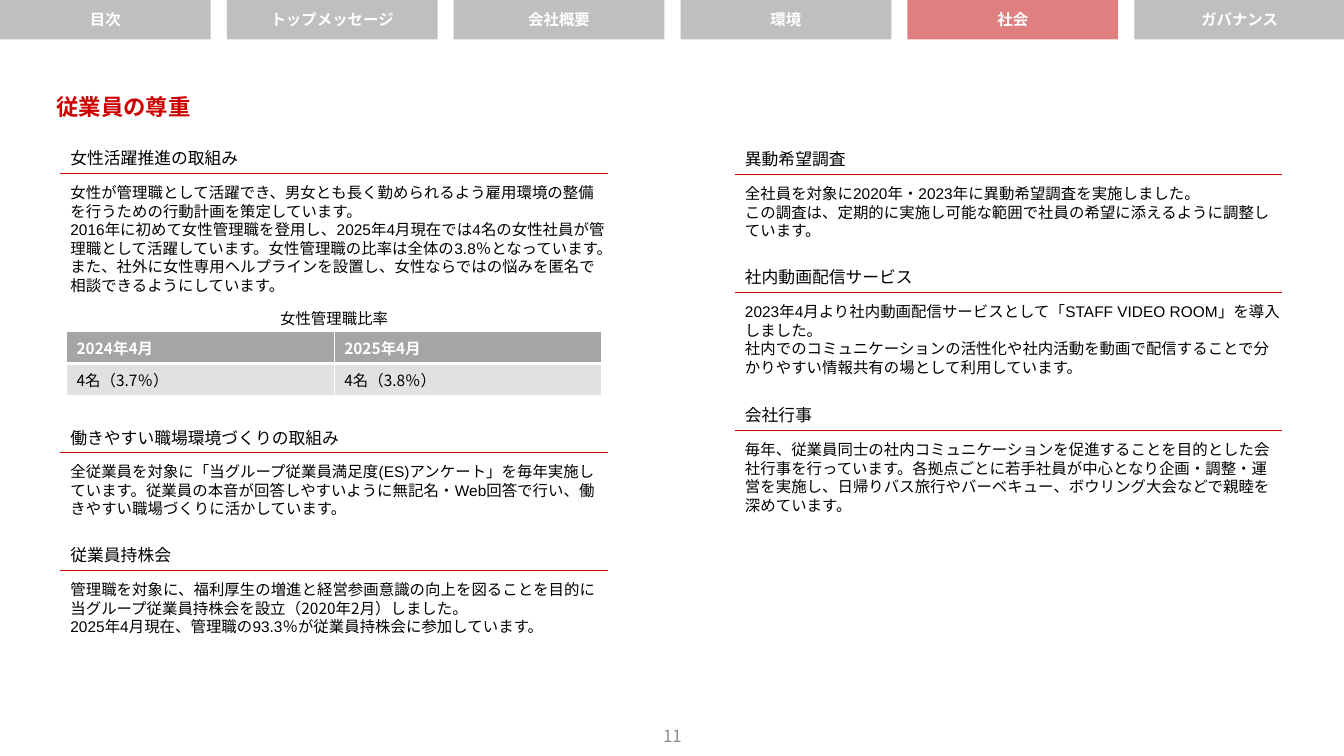
from dataclasses import dataclass

from lxml import etree
from pptx import Presentation
from pptx.dml.color import RGBColor
from pptx.enum.lang import MSO_LANGUAGE_ID
from pptx.enum.shapes import MSO_CONNECTOR, MSO_SHAPE
from pptx.enum.text import MSO_ANCHOR, MSO_AUTO_SIZE, PP_ALIGN
from pptx.oxml.ns import qn
from pptx.util import Inches, Pt

LEFT, CENTER = PP_ALIGN.LEFT, PP_ALIGN.CENTER
TOP, MIDDLE = MSO_ANCHOR.TOP, MSO_ANCHOR.MIDDLE
FIT = MSO_AUTO_SIZE.SHAPE_TO_FIT_TEXT
FIXED = MSO_AUTO_SIZE.NONE
RECTANGLE, STRAIGHT = MSO_SHAPE.RECTANGLE, MSO_CONNECTOR.STRAIGHT
JAPANESE = MSO_LANGUAGE_ID.JAPANESE


@dataclass(frozen=True)
class Theme:
    latin: str = "Arial"
    japanese: str = "Noto Sans CJK JP"
    red: str = "CC0000"
    active_tab: str = "C00000"
    tab: str = "BFBFBF"
    black: str = "000000"
    white: str = "FFFFFF"
    page: str = "8C8C8C"
    table_head: str = "A5A5A5"
    table_body: str = "E1E1E1"
    title_size: int = 16
    heading_size: int = 12
    body_size: int = 11


THEME = Theme()

TABS = ["目次", "トップメッセージ", "会社概要", "環境", "社会", "ガバナンス"]
ACTIVE_TAB = "社会"

# Column left edge -> sections: rule height, heading, paragraphs.
# A paragraph is a list of (text, font) runs.
COLUMNS = {
    0.6: [
        (1.72, "女性活躍推進の取組み", [
            [("女性が管理職として活躍でき、男女とも長く勤められるよう雇用環境の整備"
              "を行うための行動計画を策定しています。", THEME.latin)],
            [("2016年に初めて女性管理職を登用し、2025年4月現在では4名の女性社員"
              "が管理職として活躍しています。女性管理職の比率は全体の3.8％となってい"
              "ます。また、社外に女性専用ヘルプラインを設置し、女性ならではの悩みを"
              "匿名で相談できるようにしています。", THEME.latin)]]),
        (4.49, "働きやすい職場環境づくりの取組み", [
            [("全従業員を対象に「当グループ従業員満足度(ES)アンケート」を毎年実施し"
              "ています。従業員の本音が回答しやすいように無記名・Web回答で行い、働"
              "きやすい職場づくりに活かしています。", THEME.latin)]]),
        (5.66, "従業員持株会", [
            [("管理職を対象に、", THEME.latin),
             ("福利厚生の増進と経営参画意識の向上を図ることを目的に"
              "当グループ従業員持株会を設立（2020年2月）しました。", THEME.japanese)],
            [("2025年4月現在、管理職の93.3％が従業員持株会に参加しています。",
              THEME.latin)]]),
    ],
    7.29: [
        (1.73, "異動希望調査", [
            [("全社員を対象に2020年・2023年に異動希望調査を実施しました。",
              THEME.latin)],
            [("この調査は、定期的に実施し可能な範囲で社員の希望に添えるように調整し"
              "ています。", THEME.latin)]]),
        (2.9, "社内動画配信サービス", [
            [("2023年4月より社内動画配信サービスとして「STAFF VIDEO ROOM」を"
              "導入しました。", THEME.latin)],
            [("社内でのコミュニケーションの活性化や社内活動を動画で配信することで分"
              "かりやすい情報共有の場として利用しています。", THEME.latin)]]),
        (4.27, "会社行事", [
            [("毎年、従業員同士の社内コミュニケーションを促進することを目的とした会"
              "社行事を行っています。各拠点ごとに若手社員が中心となり企画・調整・運営を"
              "実施し、日帰りバス旅行やバーベキュー、ボウリング大会などで親睦を深め"
              "ています。", THEME.latin)]]),
    ],
}

RATIO_ROWS = [["2024年4月", "2025年4月"], ["4名（3.7％）", "4名（3.8％）"]]


def set_all(target, values):
    for attribute, value in values.items():
        setattr(target, attribute, value)


def write(frame, paragraphs, size, color, bold=False, align=LEFT):
    for index, runs in enumerate(paragraphs):
        paragraph = frame.add_paragraph() if index else frame.paragraphs[0]
        paragraph.alignment = align
        for text, font_name in runs:
            run = paragraph.add_run()
            run.text = text
            set_all(run.font, {"name": font_name, "size": Pt(size),
                               "bold": bold, "language_id": JAPANESE})
            run.font.color.rgb = RGBColor.from_string(color)
            east_asian = etree.SubElement(run.font._element, qn("a:ea"))
            east_asian.set("typeface", THEME.japanese)


def add_text(slide, box, paragraphs, size, color, align=LEFT, anchor=TOP):
    frame = slide.shapes.add_textbox(*map(Inches, box)).text_frame
    set_all(frame, {"word_wrap": True, "auto_size": FIT if anchor == TOP else FIXED,
                    "vertical_anchor": anchor})
    write(frame, paragraphs, size, color, align=align)


def add_title(slide, text):
    title = slide.shapes.title
    set_all(title, {"left": Inches(0.46), "top": Inches(0.87),
                    "width": Inches(2.59), "height": Inches(0.37)})
    set_all(title.text_frame, {"word_wrap": True, "auto_size": FIT,
                               "vertical_anchor": TOP})
    write(title.text_frame, [[(text, THEME.latin)]],
          THEME.title_size, THEME.red, bold=True)


def add_tab(slide, left, label, active):
    tab = slide.shapes.add_shape(RECTANGLE, Inches(left), 0,
                                 Inches(2.09), Inches(0.39))
    tab.shadow.inherit = False
    tab.line.fill.background()
    tab.fill.solid()
    tab.fill.fore_color.rgb = RGBColor.from_string(
        THEME.active_tab if active else THEME.tab)
    if active:
        color = tab._element.spPr.find(qn("a:solidFill"))[0]
        etree.SubElement(color, qn("a:alpha")).set("val", "50000")
    tab.text_frame.vertical_anchor = MIDDLE
    write(tab.text_frame, [[(label, THEME.latin)]],
          THEME.body_size, THEME.white, bold=True, align=CENTER)


def add_section(slide, left, rule_y, heading, paragraphs):
    add_text(slide, (left, rule_y - 0.3, 4.3, 0.3), [[(heading, THEME.latin)]],
             THEME.heading_size, THEME.black)
    rule = slide.shapes.add_connector(STRAIGHT, Inches(left), Inches(rule_y),
                                      Inches(left + 5.43), Inches(rule_y))
    rule.line.color.rgb = RGBColor.from_string(THEME.red)
    rule.line.width = Pt(1)
    etree.SubElement(rule._element.spPr, qn("a:effectLst"))
    add_text(slide, (left, rule_y + 0.05, 5.51, 0.66), paragraphs,
             THEME.body_size, THEME.black)


def add_borders(cell, widths):
    properties = cell._tc.get_or_add_tcPr()
    for side, width in widths.items():
        border = etree.SubElement(properties, qn(f"a:{side}"), w=str(Pt(width)))
        fill = etree.SubElement(border, qn("a:solidFill"))
        etree.SubElement(fill, qn("a:srgbClr"), val=THEME.white)


def add_ratio_table(slide):
    table = slide.shapes.add_table(2, 2, Inches(0.66), Inches(3.29),
                                   Inches(5.31), Inches(0.63)).table
    table.horz_banding = False
    for row, labels in enumerate(RATIO_ROWS):
        head = row == 0
        for column, label in enumerate(labels):
            cell = table.cell(row, column)
            add_borders(cell, {"lnL": 1, "lnR": 1, "lnT": 1 if head else 3,
                               "lnB": 3 if head else 1})
            cell.fill.solid()
            cell.fill.fore_color.rgb = RGBColor.from_string(
                THEME.table_head if head else THEME.table_body)
            cell.vertical_anchor = MIDDLE
            write(cell.text_frame, [[(label, THEME.japanese)]], THEME.body_size,
                  THEME.white if head else THEME.black, bold=head)


def main():
    deck = Presentation()
    set_all(deck, {"slide_width": Inches(13.33), "slide_height": Inches(7.5)})
    slide = deck.slides.add_slide(deck.slide_layouts[5])

    # Navigation and title
    for index, label in enumerate(TABS):
        add_tab(slide, 2.25 * index, label, label == ACTIVE_TAB)
    add_title(slide, "従業員の尊重")

    # Two columns of sections
    for left, sections in COLUMNS.items():
        for section in sections:
            add_section(slide, left, *section)

    # Share of women in management
    add_text(slide, (2.1, 3.02, 2.43, 0.29), [[("女性管理職比率", THEME.latin)]],
             THEME.body_size, THEME.black, align=CENTER)
    add_ratio_table(slide)

    # Page number
    add_text(slide, (5.17, 7.1, 3, 0.4), [[("11", THEME.japanese)]],
             THEME.heading_size, THEME.page, align=CENTER, anchor=MIDDLE)
    deck.save("out.pptx")


if __name__ == "__main__":
    main()
